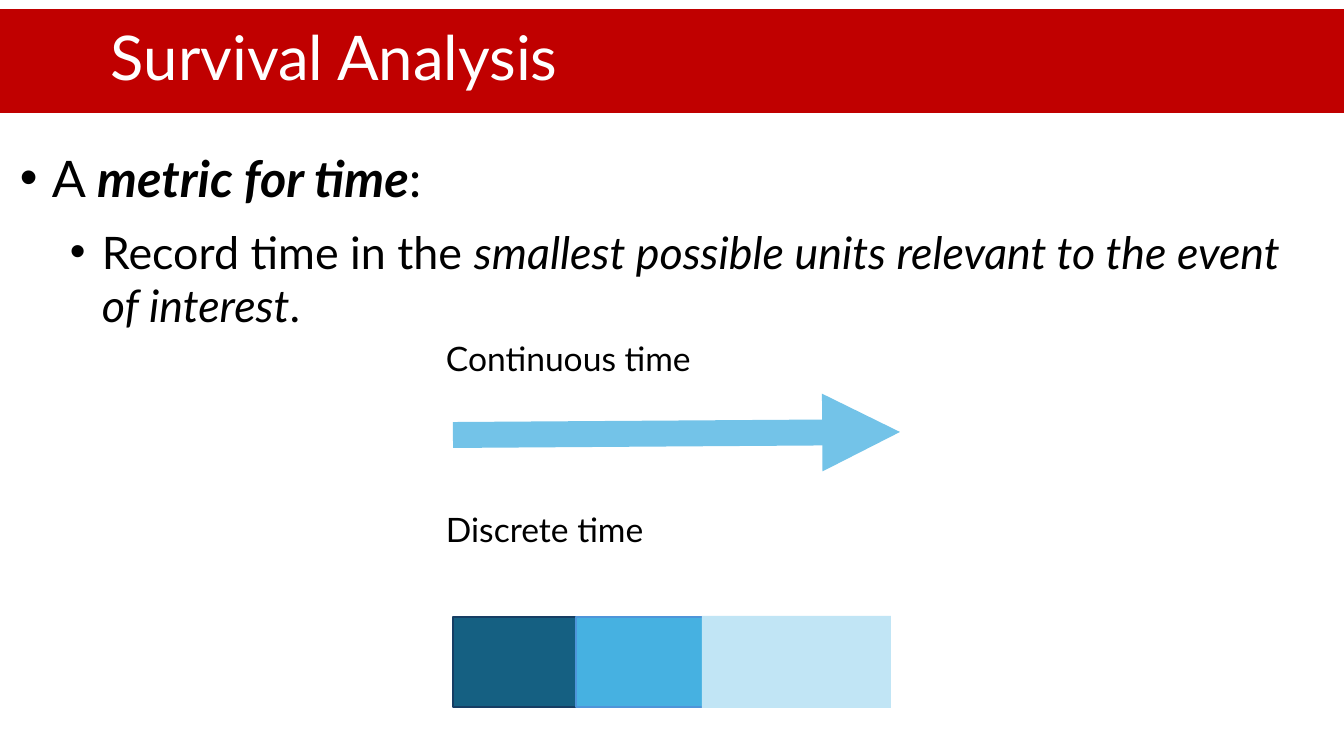
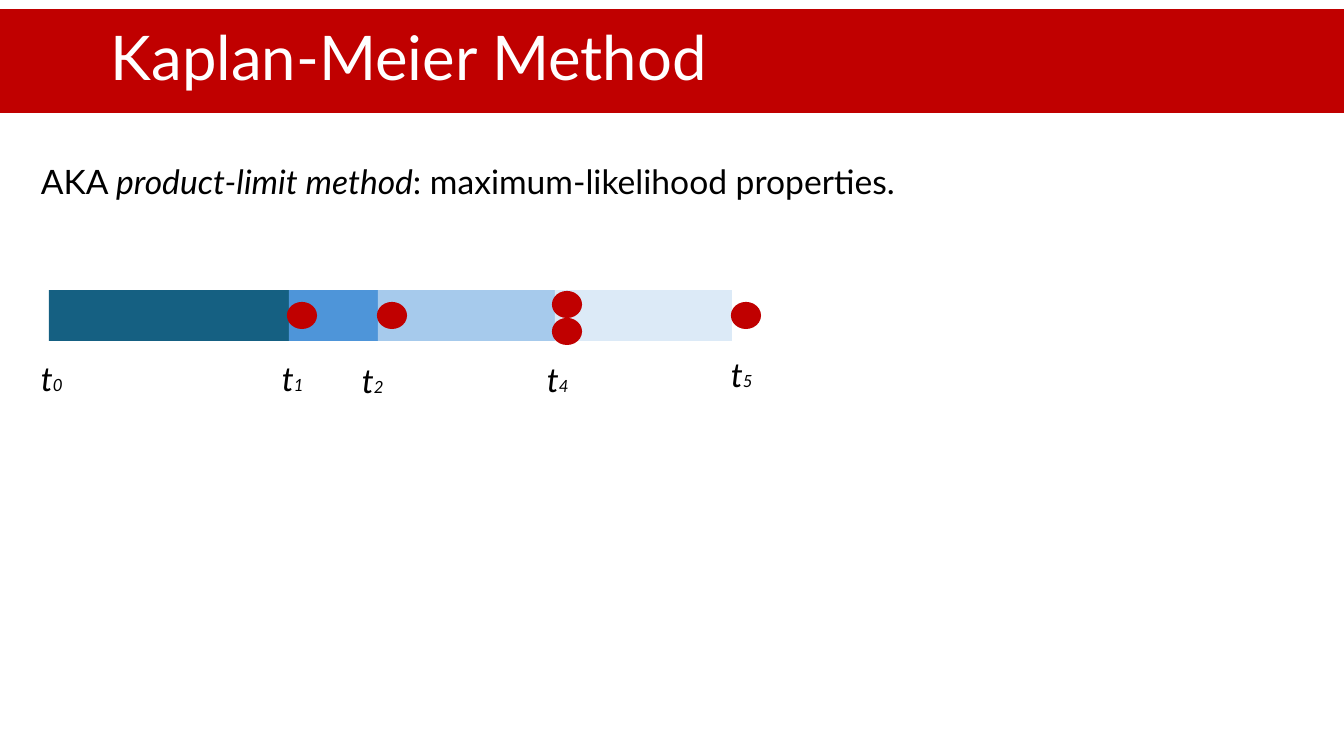
from lxml import etree
from pptx import Presentation
from pptx.dml.color import RGBColor
from pptx.enum.shapes import MSO_CONNECTOR, MSO_SHAPE
from pptx.enum.text import MSO_ANCHOR, PP_ALIGN
from pptx.oxml.ns import qn
from pptx.util import Emu, Pt

RECTANGLE = MSO_SHAPE.RECTANGLE
OVAL = MSO_SHAPE.OVAL
STRAIGHT = MSO_CONNECTOR.STRAIGHT
MIDDLE = MSO_ANCHOR.MIDDLE
LEFT = PP_ALIGN.LEFT

RED = RGBColor(0xC0, 0x00, 0x00)
WHITE = RGBColor(0xFF, 0xFF, 0xFF)
BLACK = RGBColor(0x00, 0x00, 0x00)
TEAL = RGBColor(0x15, 0x60, 0x82)
NAVY = RGBColor(0x16, 0x3E, 0x64)
SKY = RGBColor(0x46, 0xB1, 0xE1)
PALE_SKY = RGBColor(0xC1, 0xE5, 0xF5)
ARROW_BLUE = RGBColor(0x73, 0xC3, 0xE8)
BLUE = RGBColor(0x4E, 0x95, 0xD9)
LIGHT_BLUE = RGBColor(0xA6, 0xCA, 0xEC)
PALE_BLUE = RGBColor(0xDC, 0xEA, 0xF7)

SCALE = 914400 / 100.8
SLIDE_WIDTH, SLIDE_HEIGHT = 1344, 756
FONT = "Lato"
ITALIC = {"italic": True}
BOLD_ITALIC = {"bold": True, "italic": True}


def px(length):
    return Emu(round(length * SCALE))


class Deck:
    def __init__(self):
        self.presentation = Presentation()
        self.presentation.slide_width = px(SLIDE_WIDTH)
        self.presentation.slide_height = px(SLIDE_HEIGHT)
        self.slide = None

    def add_slide(self, title):
        layout = self.presentation.slide_layouts[6]
        self.slide = self.presentation.slides.add_slide(layout)
        band = self.shape(RECTANGLE, 0, 9, SLIDE_WIDTH, 104, RED)
        frame = band.text_frame
        frame.margin_left = px(111)
        frame.vertical_anchor = MIDDLE
        paragraph = frame.paragraphs[0]
        paragraph.alignment = LEFT
        paragraph.line_spacing = 0.9
        self.runs(paragraph, [(title, {})], 44, WHITE)

    def shape(self, kind, left, top, width, height, fill, line=None):
        shape = self.slide.shapes.add_shape(
            kind, px(left), px(top), px(width), px(height))
        shape.shadow.inherit = False
        shape.fill.solid()
        shape.fill.fore_color.rgb = fill
        if line is None:
            shape.line.fill.background()
        else:
            shape.line.color.rgb = line
            shape.line.width = Pt(1.5)
        return shape

    def runs(self, paragraph, parts, size, color=BLACK):
        for text, changes in parts:
            run = paragraph.add_run()
            run.text = text
            run.font.color.rgb = color
            style = {"name": FONT, "size": Pt(size), **changes}
            for name, value in style.items():
                setattr(run.font, name, value)

    def text_frame(self, left, top, width, height):
        box = self.slide.shapes.add_textbox(
            px(left), px(top), px(width), px(height))
        box.text_frame.word_wrap = True
        return box.text_frame

    def text(self, left, top, width, parts, size=24):
        frame = self.text_frame(left, top, width, 50)
        self.runs(frame.paragraphs[0], parts, size)

    def bullets(self, left, top, width, height, items):
        frame = self.text_frame(left, top, width, height)
        for level, (size, parts) in enumerate(items):
            paragraph = frame.add_paragraph() if level else frame.paragraphs[0]
            paragraph.level = level
            paragraph.space_before = Pt(12)
            properties = paragraph._p.get_or_add_pPr()
            properties.set("marL", str(px(32 + 50 * level)))
            properties.set("indent", str(-px(32)))
            font = etree.SubElement(properties, qn("a:buFont"))
            font.set("typeface", "Arial")
            etree.SubElement(properties, qn("a:buChar")).set("char", "•")
            self.runs(paragraph, parts, size)

    def arrow(self, start, end, color, width):
        connector = self.slide.shapes.add_connector(
            STRAIGHT, *map(px, start), *map(px, end))
        connector.line.color.rgb = color
        connector.line.width = Pt(width)
        line = connector.line._get_or_add_ln()
        etree.SubElement(line, qn("a:tailEnd")).set("type", "triangle")
        etree.SubElement(connector._element.spPr, qn("a:effectLst"))

    def dot(self, left, top):
        self.shape(OVAL, left, top, 28, 25, RED, RED)

    def time_label(self, index, left, top):
        parts = [("t", ITALIC), (str(index), {"size": Pt(12), **ITALIC})]
        self.text(left, top, 162, parts)


def survival_slide(deck):
    deck.add_slide("Survival Analysis")
    deck.bullets(10, 142, 1324, 475, [
        (36, [("A ", {}), ("metric for time", BOLD_ITALIC), (":", {})]),
        (32, [("Record time in the ", {}),
              ("smallest possible units relevant to the event of interest",
               ITALIC),
              (".", {})]),
    ])
    for label, top in (("Continuous time", 333), ("Discrete time", 504)):
        deck.text(436, top, 420, [(label, {})])
    deck.arrow((453, 435), (900, 432), ARROW_BLUE, 18.5)
    for left, top, height, fill, line in (
            (453, 617, 90, TEAL, NAVY),
            (576, 617, 90, SKY, BLUE),
            (702, 616, 92, PALE_SKY, None)):
        deck.shape(RECTANGLE, left, top, 189, height, fill, line)


def kaplan_meier_slide(deck):
    deck.add_slide("Kaplan-Meier Method")
    deck.text(31, 156, 994, [
        ("AKA ", {}),
        ("product-limit method", ITALIC),
        (": maximum-likelihood properties.", {}),
    ])
    edges = (49, 289, 378, 555, 732)
    fills = (TEAL, BLUE, LIGHT_BLUE, PALE_BLUE)
    for left, right, fill in zip(edges, edges[1:], fills):
        deck.shape(RECTANGLE, left, 290, right - left, 51, fill)
    for left, top in ((288, 303), (378, 303), (553, 319), (553, 292),
                      (732, 303)):
        deck.dot(left, top)
    for index, left, top in ((0, 31, 353), (1, 272, 353), (2, 352, 355),
                             (4, 537, 354), (5, 721, 349)):
        deck.time_label(index, left, top)


def main():
    deck = Deck()
    survival_slide(deck)
    kaplan_meier_slide(deck)
    deck.presentation.save("out.pptx")


if __name__ == "__main__":
    main()
